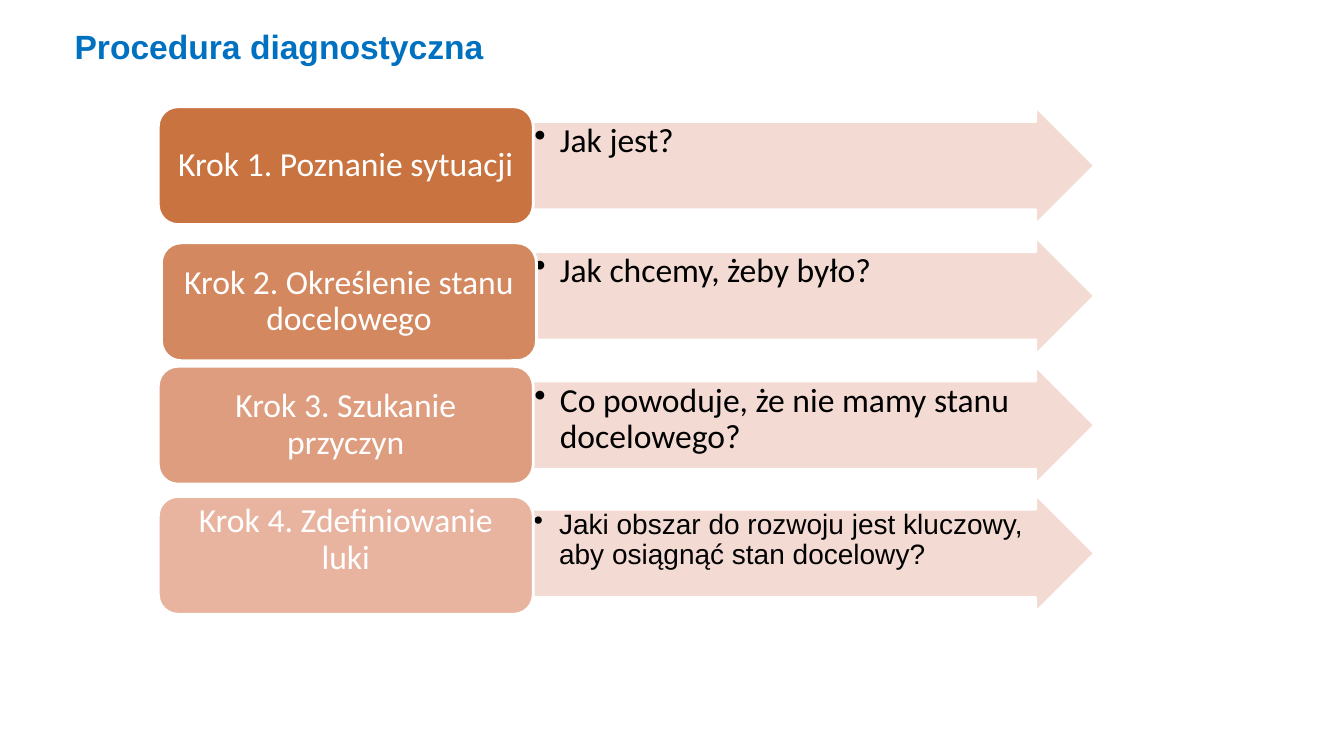
import dataclasses

import lxml.etree
import pptx
import pptx.dml.color
import pptx.enum.shapes
import pptx.enum.text
import pptx.oxml.ns
import pptx.shapes.autoshape
import pptx.slide
import pptx.text.text
import pptx.util

Cm = pptx.util.Cm
Pt = pptx.util.Pt
Kind = pptx.enum.shapes.MSO_SHAPE
Align = pptx.enum.text.PP_ALIGN
Anchor = pptx.enum.text.MSO_ANCHOR

COLORS = {
    "title": "0070C0",
    "arrow": "F2D8CF",
    "white": "FFFFFF",
    "black": "000000",
    "step1": "C97440",
    "step2": "D4885F",
    "step3": "DF9D7F",
    "step4": "E8B4A0",
}


@dataclasses.dataclass(frozen=True)
class Step:
    label: str
    answer: str
    color: str
    arrow_top: float
    box_top: float
    box_left: float = 3.99
    box_foot: float = 0.13
    font: str = "Calibri"
    size: int = 24
    inset: float = 0.05


STEPS = (
    Step("Krok 1. Poznanie sytuacji", "Jak jest?", "step1", 2.69, 2.69),
    Step("Krok 2. Określenie stanu docelowego", "Jak chcemy, żeby było?",
         "step2", 5.97, 6.12, box_left=4.07),
    Step("Krok 3. Szukanie przyczyn", "Co powoduje, że nie mamy stanu docelowego?",
         "step3", 9.23, 9.23),
    Step("Krok 4. Zdefiniowanie luki",
         "Jaki obszar do rozwoju jest kluczowy, aby osiągnąć stan docelowy?",
         "step4", 12.46, 12.51, box_foot=0.89, font="Arial", size=20, inset=0.03),
)


def rgb(key: str) -> pptx.dml.color.RGBColor:
    return pptx.dml.color.RGBColor.from_string(COLORS[key])


def set_font(para: pptx.text.text._Paragraph, face: str, size: int,
             color: str, bold: bool = False) -> None:
    para.font.name = face
    para.font.size = Pt(size)
    para.font.bold = bold
    para.font.color.rgb = rgb(color)


def add_block(slide: pptx.slide.Slide, kind: Kind, left: float, top: float,
              width: float, fill: str) -> pptx.shapes.autoshape.Shape:
    block = slide.shapes.add_shape(kind, Cm(left), Cm(top), Cm(width), Cm(2.97))
    block.shadow.inherit = False
    block.fill.solid()
    block.fill.fore_color.rgb = rgb(fill)
    block.line.color.rgb = rgb("white")
    block.line.width = Pt(2)
    block.text_frame.word_wrap = True
    return block


def add_bullet(para: pptx.text.text._Paragraph) -> None:
    props = para._p.get_or_add_pPr()
    props.set("marL", str(Cm(0.64)))
    props.set("indent", str(-Cm(0.64)))
    mark = lxml.etree.SubElement(props, pptx.oxml.ns.qn("a:buChar"))
    mark.set("char", "•")


def add_arrow(slide: pptx.slide.Slide, step: Step) -> None:
    arrow = add_block(slide, Kind.RIGHT_ARROW, 13.42, step.arrow_top, 14.17, "arrow")
    arrow.adjustments[0] = 0.75
    arrow.adjustments[1] = 0.5
    shade = arrow._element.spPr.find(".//" + pptx.oxml.ns.qn("a:srgbClr"))
    lxml.etree.SubElement(shade, pptx.oxml.ns.qn("a:alpha")).set("val", "90000")
    frame = arrow.text_frame
    frame.vertical_anchor = Anchor.TOP
    frame.margin_left = frame.margin_right = Cm(step.inset)
    frame.margin_top = frame.margin_bottom = Cm(step.inset)
    para = frame.paragraphs[0]
    para.text = step.answer
    add_bullet(para)
    para.level = 1
    para.alignment = Align.LEFT
    para.line_spacing = 0.9
    set_font(para, step.font, step.size, "black")


def add_label(slide: pptx.slide.Slide, step: Step) -> None:
    box = add_block(slide, Kind.ROUNDED_RECTANGLE, step.box_left, step.box_top,
                    9.45, step.color)
    frame = box.text_frame
    frame.vertical_anchor = Anchor.MIDDLE
    frame.margin_bottom = Cm(step.box_foot)
    para = frame.paragraphs[0]
    para.text = step.label
    para.alignment = Align.CENTER
    para.line_spacing = 0.9
    set_font(para, "Calibri", 24, "white")


def add_title(slide: pptx.slide.Slide) -> None:
    frame = slide.shapes.add_textbox(Cm(1.63), Cm(0.53), Cm(11.15), Cm(1.27)).text_frame
    frame.word_wrap = False
    frame.auto_size = pptx.enum.text.MSO_AUTO_SIZE.SHAPE_TO_FIT_TEXT
    para = frame.paragraphs[0]
    para.text = "Procedura diagnostyczna"
    set_font(para, "Arial", 24, "title", bold=True)


def main() -> None:
    deck = pptx.Presentation()
    deck.slide_width = Cm(33.87)
    deck.slide_height = Cm(19.05)
    slide = deck.slides.add_slide(deck.slide_layouts[6])
    for step in STEPS:
        add_arrow(slide, step)
        add_label(slide, step)
    add_title(slide)
    deck.save("out.pptx")


if __name__ == "__main__":
    main()
